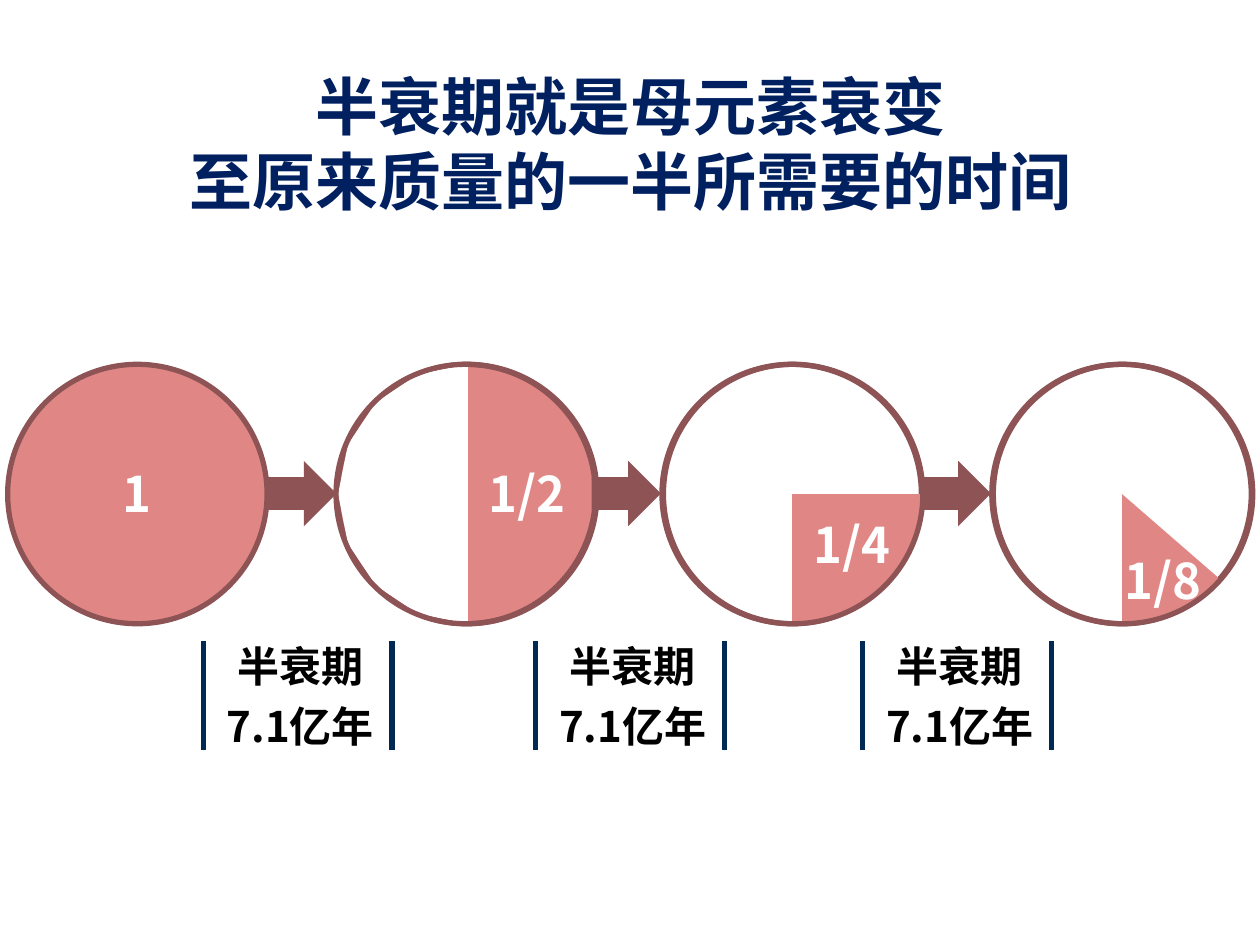
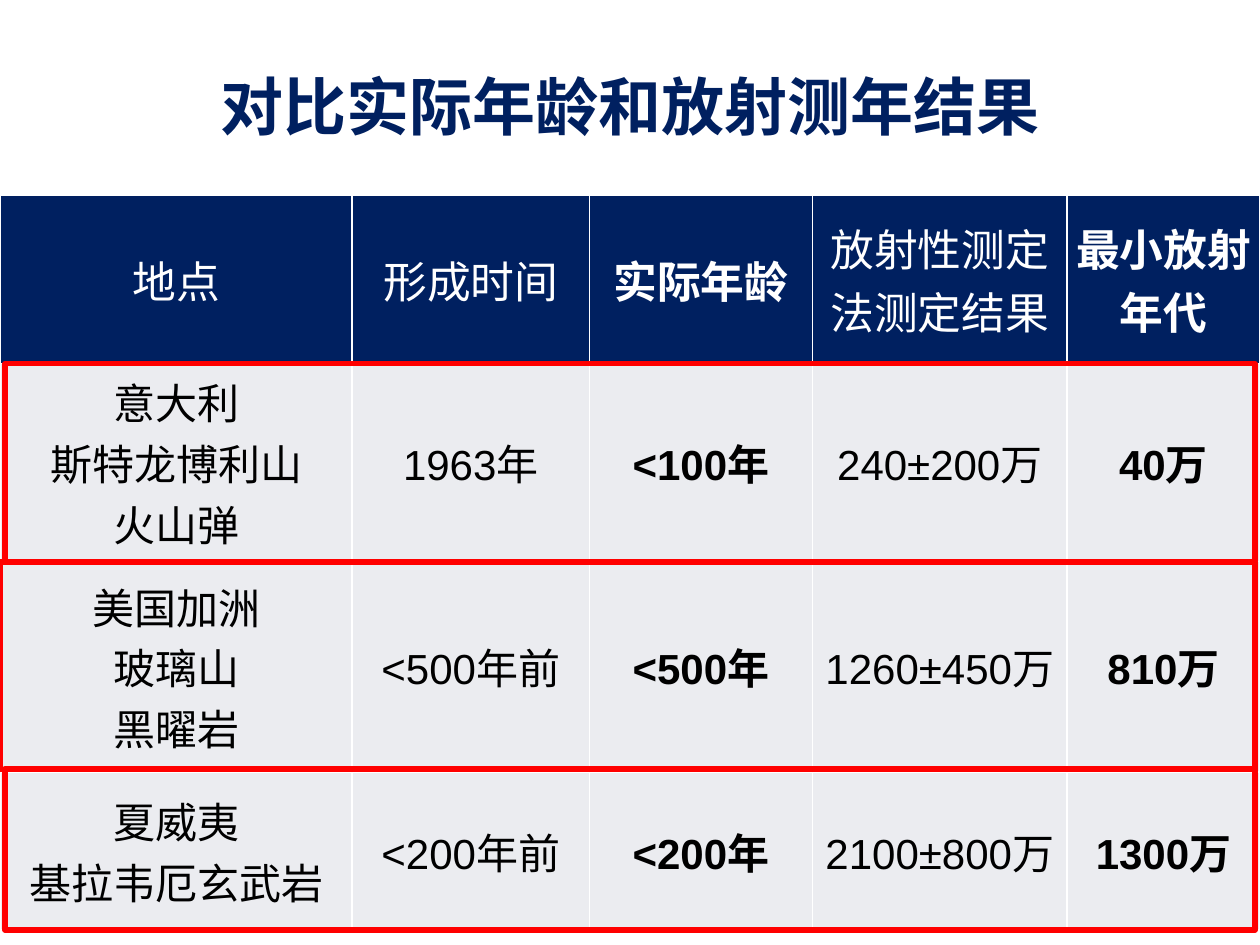
from math import cos, radians, sin

from lxml.etree import SubElement
from pptx import Presentation
from pptx.dml.color import RGBColor
from pptx.enum.shapes import MSO_CONNECTOR, MSO_SHAPE
from pptx.enum.text import MSO_ANCHOR, MSO_AUTO_SIZE, PP_ALIGN
from pptx.oxml.ns import qn
from pptx.util import Cm, Pt

CJK_FONT = "Noto Sans CJK SC"
NAVY, WHITE, BLACK = "002060", "FFFFFF", "000000"
PINK, BROWN, BRACKET_BLUE = "E08785", "8E5455", "002954"
RED, PALE = "FF0000", "EBECF0"

DECAY_TITLE = "半衰期就是母元素衰变\n至原来质量的一半所需要的时间"
DIAMETER, CENTER_Y = 5.23, 9.96
CIRCLES = [
    {"x": 2.77, "base": PINK, "label": "1", "label_box": (-0.04, 9.22, 5.59)},
    {"x": 9.42, "base": PINK, "slice": (WHITE, 90, 270, 8), "outline_shift": -0.03,
     "label": "1/2", "label_box": (9.42, 9.22, 2.41)},
    {"x": 15.96, "base": WHITE, "slice": (PINK, 0, 90, 8), "outline_shift": 0.03,
     "label": "1/4", "label_box": (16.07, 10.24, 2.21)},
    {"x": 22.61, "base": WHITE, "slice": (PINK, 41, 90, 6), "outline_shift": 0.03,
     "label": "1/8", "label_box": (22.34, 10.97, 2.21)},
]
HALF_LIFE = "半衰期\n7.1亿年"
BRACKET_LEFTS = [4.1, 10.8, 17.39]
BRACKET_WIDTH, BRACKET_TOP, BRACKET_BOTTOM = 3.8, 12.93, 15.11

AGES_TITLE = "对比实际年龄和放射测年结果"
AGES = [
    ("地点", "形成时间", "实际年龄", "放射性测定法测定结果", "最小放射年代"),
    ("意大利\n斯特龙博利山\n火山弹", "1963年", "<100年", "240±200万", "40万"),
    ("美国加洲\n玻璃山\n黑曜岩", "<500年前", "<500年", "1260±450万", "810万"),
    ("夏威夷\n基拉韦厄玄武岩", "<200年前", "<200年", "2100±800万", "1300万"),
]
COLUMN_WIDTHS = [7.1, 4.78, 4.5, 5.13, 3.89]
ROW_HEIGHTS = [3.4, 3.99, 4.24, 3.18]
BOLD_COLUMNS = (2, 4)
ROW_FRAMES = [(0.1, 7.33, 25.2, 3.99), (0, 11.33, 25.3, 4.18), (0.1, 15.5, 25.2, 3.25)]


def rgb(color):
    return RGBColor.from_string(color)


def write(frame, text, size, color, bold=True, font=CJK_FONT, spacing=None, gap=0,
          anchor=MSO_ANCHOR.TOP, top_inset=0.0):
    frame.word_wrap = True
    frame.vertical_anchor = anchor
    frame.margin_top, frame.margin_bottom = Cm(top_inset), 0
    for index, line in enumerate(text.split("\n")):
        paragraph = frame.add_paragraph() if index else frame.paragraphs[0]
        paragraph.alignment = PP_ALIGN.CENTER
        paragraph.space_before = Pt(gap if index else 0)
        if spacing:
            paragraph.line_spacing = Pt(spacing)
        run = paragraph.add_run()
        run.text = line
        run.font.size, run.font.bold, run.font.name = Pt(size), bold, font
        run.font.color.rgb = rgb(color)
        SubElement(run.font._element, qn("a:ea")).set("typeface", CJK_FONT)


def paint(shape, fill=None, line=None):
    shape.shadow.inherit = False
    if fill:
        shape.fill.solid()
        shape.fill.fore_color.rgb = rgb(fill)
    else:
        shape.fill.background()
    if line:
        shape.line.color.rgb = rgb(line)
        shape.line.width = Pt(3)
    else:
        shape.line.fill.background()


def add_preset(slide, preset, left, top, width, height, fill=None, line=None):
    shape = slide.shapes.add_shape(preset, Cm(left), Cm(top), Cm(width), Cm(height))
    paint(shape, fill, line)


def add_text(slide, text, left, top, width, height, **style):
    box = slide.shapes.add_textbox(Cm(left), Cm(top), Cm(width), Cm(height))
    write(box.text_frame, text, **style)


def add_titled_slide(presentation, title, height):
    slide = presentation.slides.add_slide(presentation.slide_layouts[5])
    shape = slide.shapes.title
    shape.left, shape.top, shape.width, shape.height = Cm(0), Cm(1.22), Cm(25.4), Cm(height)
    shape.text_frame.auto_size = MSO_AUTO_SIZE.NONE
    write(shape.text_frame, title, 36, NAVY, spacing=43, top_inset=0.15)
    return slide


def add_slice(slide, center_x, color, start, end, steps):
    radius = DIAMETER / 2
    angles = [radians(start + (end - start) * step / steps) for step in range(steps + 1)]
    arc = [(Cm(center_x + radius * cos(angle)), Cm(CENTER_Y + radius * sin(angle)))
           for angle in angles]
    builder = slide.shapes.build_freeform(Cm(center_x), Cm(CENTER_Y))
    builder.add_line_segments(arc, close=True)
    paint(builder.convert_to_shape(), color)


def add_circle(slide, circle):
    left, top = circle["x"] - DIAMETER / 2, CENTER_Y - DIAMETER / 2
    add_preset(slide, MSO_SHAPE.OVAL, left, top, DIAMETER, DIAMETER, fill=circle["base"], line=BROWN)
    if "slice" in circle:
        add_slice(slide, circle["x"] + 0.01, *circle["slice"])
        add_preset(slide, MSO_SHAPE.RIGHT_ARROW, left - 1.42, CENTER_Y - 0.67, 1.4, 1.32, fill=BROWN)
        add_preset(slide, MSO_SHAPE.OVAL, left + circle["outline_shift"], top,
                   DIAMETER, DIAMETER, line=BROWN)
    add_text(slide, circle["label"], *circle["label_box"], 1.45,
             size=28, color=WHITE, anchor=MSO_ANCHOR.MIDDLE)


def add_half_life(slide, left):
    for x in (left + BRACKET_WIDTH, left):
        line = slide.shapes.add_connector(
            MSO_CONNECTOR.STRAIGHT, Cm(x), Cm(BRACKET_TOP), Cm(x), Cm(BRACKET_BOTTOM))
        line.line.color.rgb = rgb(BRACKET_BLUE)
        line.line.width = Pt(3)
        SubElement(line._element.spPr, qn("a:effectLst"))
    add_text(slide, HALF_LIFE, left, 12.8, 3.91, 2.49,
             size=24, color=BLACK, spacing=29, gap=5.4, top_inset=0.11)


def add_borders(cell):
    properties = cell._tc.get_or_add_tcPr()
    for index, side in enumerate(("lnL", "lnR", "lnT", "lnB")):
        border = SubElement(properties, qn(f"a:{side}"), w=str(Pt(1)))
        fill = SubElement(border, qn("a:solidFill"))
        SubElement(fill, qn("a:srgbClr"), val=WHITE)
        properties.insert(index, border)


def add_ages_table(slide):
    table = slide.shapes.add_table(
        len(AGES), len(COLUMN_WIDTHS), Cm(0), Cm(3.93),
        Cm(sum(COLUMN_WIDTHS)), Cm(sum(ROW_HEIGHTS))).table
    for column, width in zip(table.columns, COLUMN_WIDTHS):
        column.width = Cm(width)
    for row, height in zip(table.rows, ROW_HEIGHTS):
        row.height = Cm(height)
    for row_index, values in enumerate(AGES):
        size, color, fill = (24, BLACK, PALE) if row_index else (25, WHITE, NAVY)
        for column_index, value in enumerate(values):
            cell = table.cell(row_index, column_index)
            cell.fill.solid()
            cell.fill.fore_color.rgb = rgb(fill)
            add_borders(cell)
            write(cell.text_frame, value, size, color, bold=column_index in BOLD_COLUMNS, font="Arial")
            cell.vertical_anchor = MSO_ANCHOR.MIDDLE
            cell.margin_left = cell.margin_right = Cm(0.13)
            cell.margin_top = cell.margin_bottom = 0


def main():
    presentation = Presentation()
    presentation.slide_width, presentation.slide_height = Cm(25.4), Cm(19.05)

    decay_slide = add_titled_slide(presentation, DECAY_TITLE, 3.33)
    for circle in CIRCLES:
        add_circle(decay_slide, circle)
    for left in BRACKET_LEFTS:
        add_half_life(decay_slide, left)

    ages_slide = add_titled_slide(presentation, AGES_TITLE, 1.8)
    add_ages_table(ages_slide)
    for frame in ROW_FRAMES:
        add_preset(ages_slide, MSO_SHAPE.RECTANGLE, *frame, line=RED)

    presentation.save("out.pptx")


if __name__ == "__main__":
    main()
